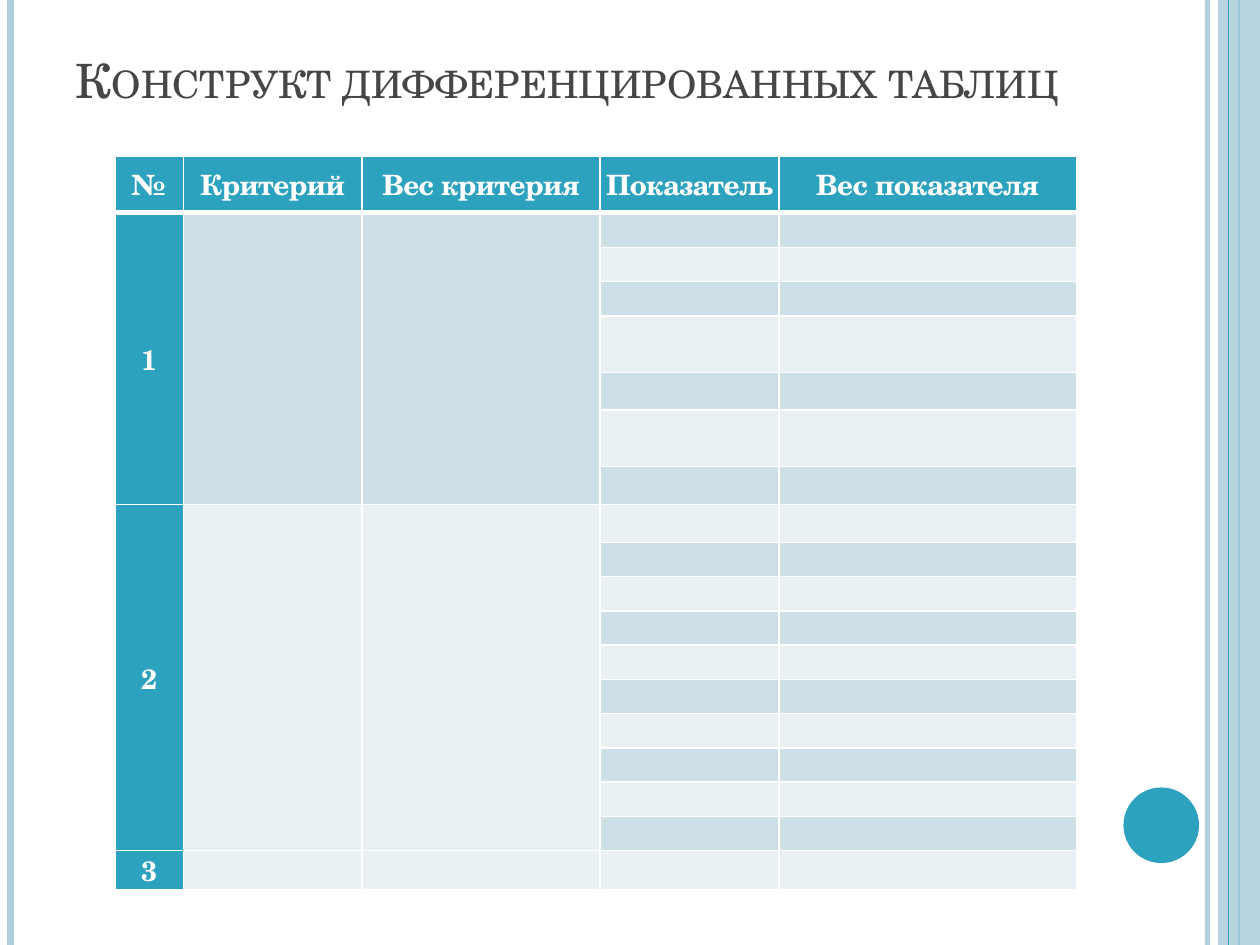
from lxml.etree import SubElement
from pptx import Presentation
from pptx.dml.color import RGBColor
from pptx.enum.shapes import MSO_CONNECTOR as CONN, MSO_SHAPE as SHAPE
from pptx.enum.text import MSO_ANCHOR as ANCHOR, PP_ALIGN as ALIGN
from pptx.oxml.ns import qn
from pptx.util import Pt

FONT = "TeX Gyre Schola"
ACCENT, PALE, BAND, LIGHT = "2DA2BF", "ADCEDC", "CDE0E8", "E8F0F4"
WHITE, GREY = "FFFFFF", "464646"

HEADERS = ["№", "Критерий", "Вес критерия", "Показатель", "Вес показателя"]
COL_WIDTHS = [39.2, 102.2, 136, 102.2, 170]
ROW_HEIGHTS = ([32.4, 20, 19.6, 19.6, 32.4, 21.3, 32.4, 21.6, 21.6]
               + [19.6] * 9 + [21.6])
GROUP_SIZES = [7, 10, 1]


def rgb(value):
    """Turn a hex string into a colour."""
    return RGBColor.from_string(value)


def paint(fill, color, alpha=100):
    """Give a fill a solid colour and an opacity in percent."""
    fill.solid()
    fill.fore_color.rgb = rgb(color)
    if alpha < 100:
        clr = fill._xPr.find(".//" + qn("a:srgbClr"))
        SubElement(clr, qn("a:alpha"), val=str(alpha * 1000))


def write(tf, text, size, color, bold=False, align=ALIGN.LEFT,
          leading=None, tracking=None, small_caps=False):
    """Write one formatted paragraph into a text frame."""
    p = tf.paragraphs[0]
    p.alignment = align
    p.line_spacing = leading
    r = p.add_run()
    r.text = text
    f = r.font
    f.name, f.size, f.bold = FONT, Pt(size), bold
    f.color.rgb = rgb(color)
    if tracking is not None:
        r._r.get_or_add_rPr().set("spc", str(round(tracking * 100)))
    if small_caps:
        r._r.get_or_add_rPr().set("cap", "small")


def add_rule(s, x, top, height, color, width, alpha=100):
    """Draw a vertical line."""
    line = s.shapes.add_connector(
        CONN.STRAIGHT, Pt(x), Pt(top), Pt(x), Pt(top + height))
    line.line.width = Pt(width)
    paint(line.line.fill, color, alpha)
    SubElement(line._element.spPr, qn("a:effectLst"))


def add_block(s, kind, box, color, alpha=100):
    """Draw a plain filled shape."""
    sp = s.shapes.add_shape(kind, *map(Pt, box))
    sp.shadow.inherit = False
    sp.line.fill.background()
    paint(sp.fill, color, alpha)


def add_frame(s, left, top, width, height):
    """Draw the edge stripes and the corner disc."""
    right = left + width
    add_rule(s, right - 30, top, height, PALE, 3, 93)
    add_rule(s, left + 6, top, height, PALE, 4.5)
    add_rule(s, right - 12, top, height, ACCENT, 1.5)
    add_block(s, SHAPE.RECTANGLE, (right - 24, top, 24, height), PALE, 87)
    add_rule(s, right - 18, top, height, ACCENT, 0.75)
    add_block(s, SHAPE.OVAL,
              (right - 78, top + height - 90, 43.2, 43.2), ACCENT)


def add_title(s, left, top, width, height):
    """Place and fill the title placeholder."""
    title = s.shapes.title
    title.left, title.top = Pt(left), Pt(top)
    title.width, title.height = Pt(width), Pt(height)
    tf = title.text_frame
    tf.word_wrap = True
    tf.vertical_anchor = ANCHOR.BOTTOM
    write(tf, "Конструкт дифференцированных таблиц", 27, GREY,
          small_caps=True)


def format_cell(cell, color, top=1, bottom=1):
    """Set a cell's margins, white borders and fill."""
    cell.margin_left = cell.margin_right = Pt(2.2)
    cell.margin_top = cell.margin_bottom = 0
    cell.vertical_anchor = ANCHOR.MIDDLE
    tc_pr = cell._tc.get_or_add_tcPr()
    for side, width in (("L", 1), ("R", 1), ("T", top), ("B", bottom)):
        ln = SubElement(tc_pr, qn("a:ln" + side), w=str(Pt(width)))
        fill = SubElement(ln, qn("a:solidFill"))
        SubElement(fill, qn("a:srgbClr"), val=WHITE)
    paint(cell.fill, color)


def fill_cell(cell, text):
    """Write a heading into a cell, or keep an empty one small."""
    if text:
        write(cell.text_frame, text, 16, WHITE, bold=True,
              align=ALIGN.CENTER, leading=0.9, tracking=-0.3)
    else:
        p = cell.text_frame.paragraphs[0]
        SubElement(p._p, qn("a:endParaRPr"), sz="1200")


def add_criteria_table(s, left, top):
    """Build the table of criteria, grouped by number."""
    frame = s.shapes.add_table(
        len(ROW_HEIGHTS), len(COL_WIDTHS), Pt(left), Pt(top),
        Pt(sum(COL_WIDTHS)), Pt(sum(ROW_HEIGHTS)))
    table = frame.table
    table.horz_banding = False
    for col, width in zip(table.columns, COL_WIDTHS):
        col.width = Pt(width)
    for row, height in zip(table.rows, ROW_HEIGHTS):
        row.height = Pt(height)

    for c, text in enumerate(HEADERS):
        format_cell(table.cell(0, c), ACCENT, bottom=3)
        fill_cell(table.cell(0, c), text)

    start = 1
    for number, size in enumerate(GROUP_SIZES, 1):
        for r in range(start, start + size):
            in_band = r % 2 == 1 and r < len(ROW_HEIGHTS) - 1
            for c in range(len(COL_WIDTHS)):
                color = ACCENT if c == 0 else BAND if in_band else LIGHT
                format_cell(table.cell(r, c), color, top=3 if r == 1 else 1)
                label = str(number) if c == 0 and r == start else ""
                fill_cell(table.cell(r, c), label)
        if size > 1:
            for c in range(3):
                table.cell(start, c).merge(table.cell(start + size - 1, c))
        start += size


def main():
    """Build the slide and save it."""
    prs = Presentation()
    prs.slide_width, prs.slide_height = Pt(720), Pt(540)
    s = prs.slides.add_slide(prs.slide_layouts[5])
    add_frame(s, 0, 0, 720, 540)
    add_criteria_table(s, 65.6, 89)
    add_title(s, 36, 21.6, 588, 43.9)
    prs.save("out.pptx")


if __name__ == "__main__":
    main()
